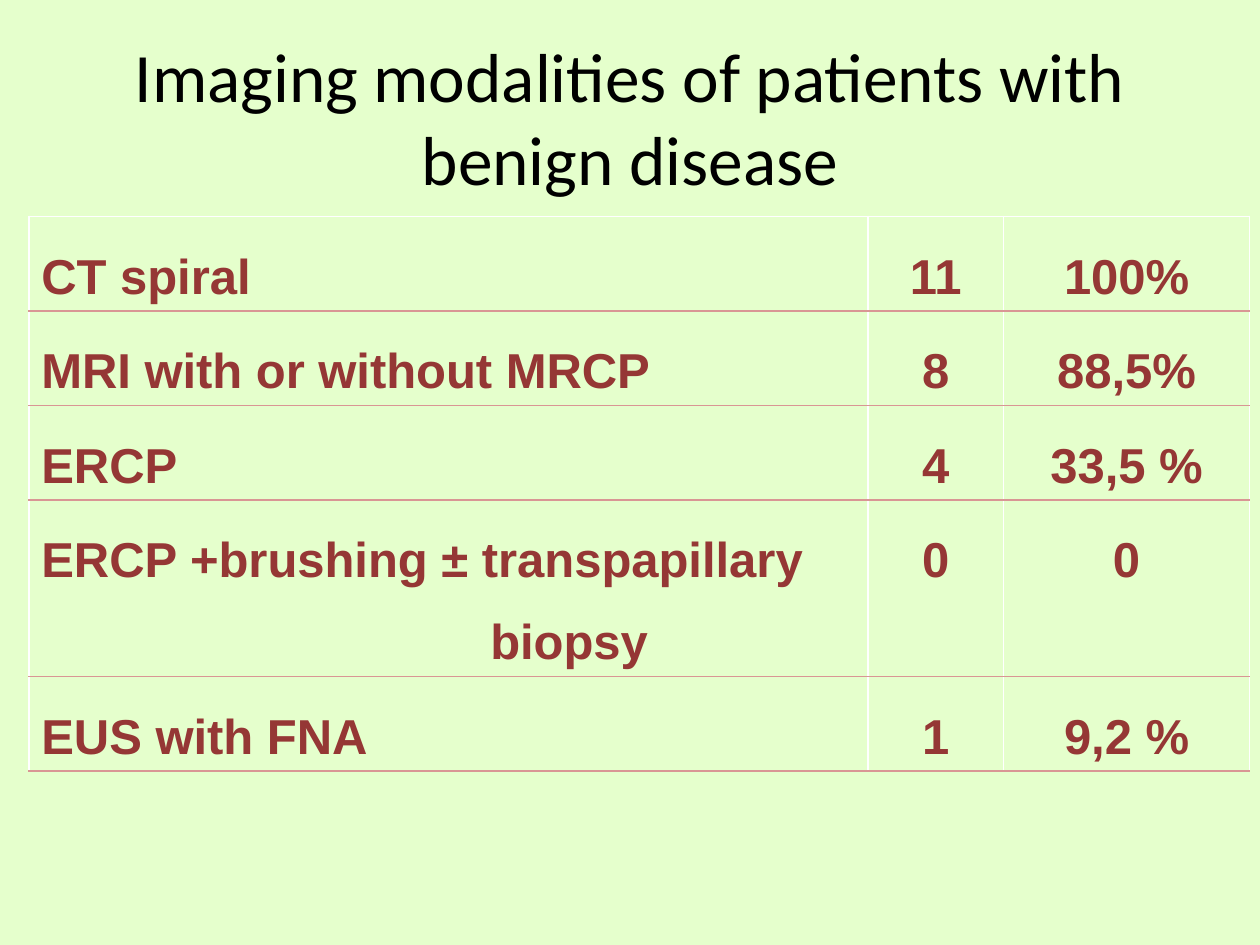
from lxml import etree
from pptx import Presentation
from pptx.dml.color import RGBColor
from pptx.enum import text
from pptx.oxml import ns
from pptx.util import Cm, Pt


def color(hex_code):
    return RGBColor.from_string(hex_code)


def add_border(cell, side, hex_code):
    line = etree.SubElement(cell._tc.get_or_add_tcPr(), ns.qn(f"a:ln{side}"), w=str(Pt(1)))
    fill = etree.SubElement(line, ns.qn("a:solidFill"))
    etree.SubElement(fill, ns.qn("a:srgbClr"), val=hex_code)


WHITE, ROSE, MAROON = "FFFFFF", "D99694", "953735"

deck = Presentation()
deck.slide_width, deck.slide_height = Cm(25.4), Cm(19.05)
slide = deck.slides.add_slide(deck.slide_layouts[5])
slide.background.fill.solid()
slide.background.fill.fore_color.rgb = color("E5FFCC")

heading = slide.shapes.title
heading.left, heading.top, heading.width, heading.height = Cm(1.27), Cm(0.76), Cm(22.86), Cm(3.18)
heading.text_frame.text = "Imaging modalities of patients with benign disease"
heading.text_frame.auto_size = text.MSO_AUTO_SIZE.NONE
heading.text_frame.vertical_anchor = text.MSO_ANCHOR.MIDDLE
heading_line = heading.text_frame.paragraphs[0]
heading_line.alignment = text.PP_ALIGN.CENTER
heading_line.font.name = "Calibri"
heading_line.font.size = Pt(39.6)
heading_line.font.color.rgb = color("000000")

modalities = [
    ("CT spiral", "11", "100%"),
    ("MRI with or without MRCP", "8", "88,5%"),
    ("ERCP", "4", "33,5 %"),
    ("ERCP +brushing ± transpapillary\nbiopsy", "0", "0"),
    ("EUS with FNA", "1", "9,2 %"),
]
column_widths = [16.92, 2.73, 4.96]
row_heights = [1.9, 1.9, 1.9, 3.56, 1.9]

results = slide.shapes.add_table(
    len(modalities), len(column_widths), Cm(0.58), Cm(4.36),
    Cm(sum(column_widths)), Cm(sum(row_heights)),
).table
results.first_row = results.horz_banding = False
for column, width in zip(results.columns, column_widths):
    column.width = Cm(width)

for r, (modality, height) in enumerate(zip(modalities, row_heights)):
    results.rows[r].height = Cm(height)
    for c, value in enumerate(modality):
        cell = results.cell(r, c)
        cell.text = value
        for side, hex_code in zip("LRTB", (WHITE, WHITE, ROSE if r else WHITE, ROSE)):
            add_border(cell, side, hex_code)
        cell.fill.background()
        for p, line in enumerate(cell.text_frame.paragraphs):
            line.alignment = text.PP_ALIGN.CENTER if c else text.PP_ALIGN.LEFT
            line.line_spacing = 1.5
            line.font.name = "Arial"
            line.font.size = Pt(28)
            line.font.bold = True
            line.font.color.rgb = color(MAROON)
            if p:
                line._p.get_or_add_pPr().set("marL", str(Cm(9.05)))

deck.save("out.pptx")
